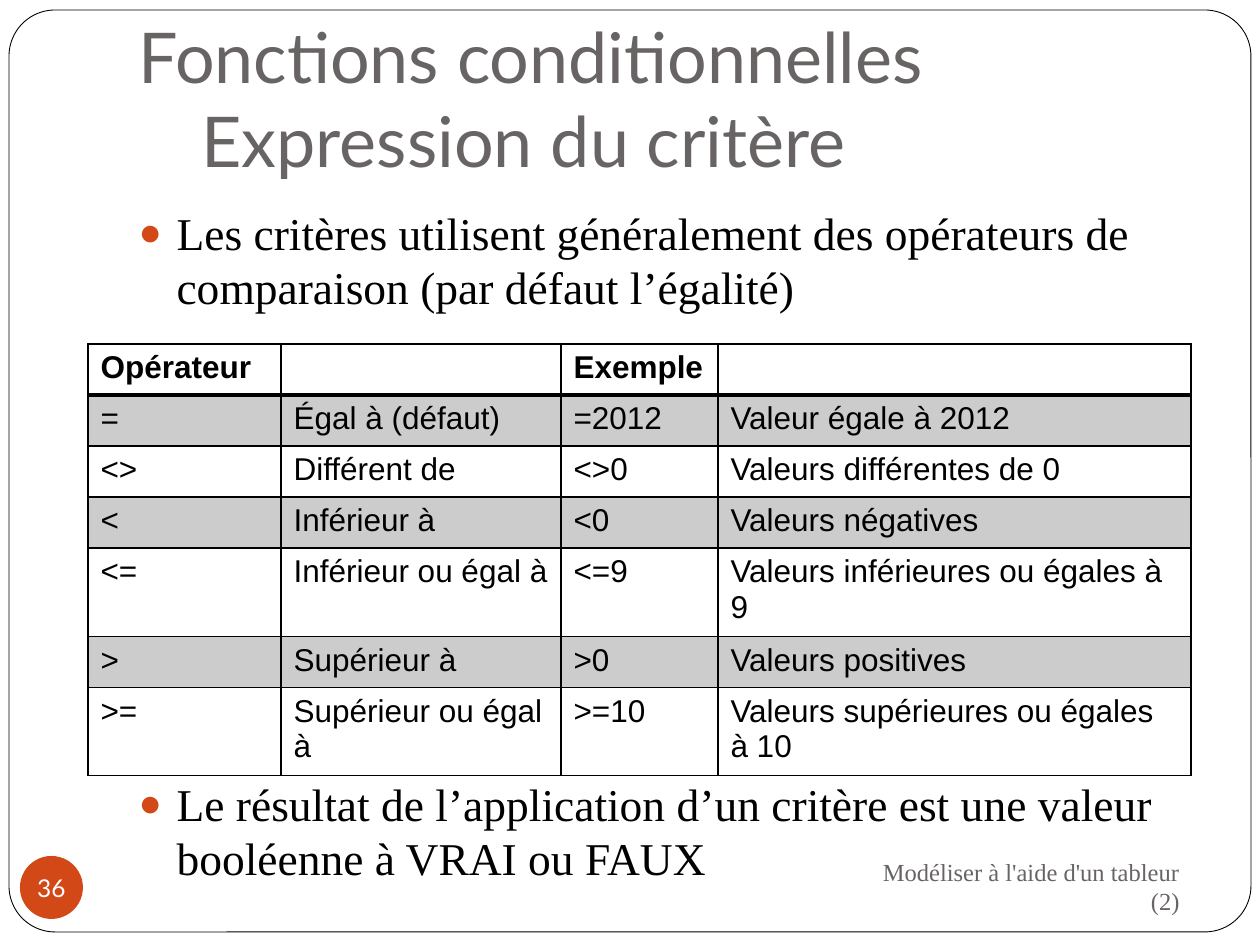
from pptx import Presentation
from pptx import util as u
from pptx.dml import color
from pptx.enum import shapes, text
from pptx.oxml import parse_xml
from pptx.oxml import ns

BLACK = color.RGBColor(0x00, 0x00, 0x00)
WHITE = color.RGBColor(0xFF, 0xFF, 0xFF)
GREY = color.RGBColor(0x69, 0x64, 0x64)
ORANGE = color.RGBColor(0xD3, 0x48, 0x17)
EMU_PER_PX = 914400 / 126


def px(*lengths):
    return [u.Emu(round(length * EMU_PER_PX)) for length in lengths]


def style(paragraph, font_color, paragraph_format, font_format):
    for name, value in paragraph_format.items():
        setattr(paragraph, name, value)
    for run in paragraph.runs:
        for name, value in font_format.items():
            setattr(run.font, name, value)
        run.font.color.rgb = font_color


presentation = Presentation()
presentation.slide_width, presentation.slide_height = px(1260, 945)
slide = presentation.slides.add_slide(presentation.slide_layouts[1])

frame = slide.shapes.add_shape(shapes.MSO_SHAPE.ROUNDED_RECTANGLE, *px(9, 10, 1242, 922))
frame.adjustments[0] = 0.05
frame.shadow.inherit = False
frame.fill.solid()
frame.fill.fore_color.rgb = WHITE
frame.line.color.rgb = BLACK
frame.line.width = u.Pt(0.5)
slide.shapes._spTree.insert(2, frame._element)

title = slide.shapes.title
title.left, title.top, title.width, title.height = px(126, 38, 1071, 157)
title_format = {
    "vertical_anchor": text.MSO_ANCHOR.BOTTOM,
    "auto_size": text.MSO_AUTO_SIZE.NONE,
    "margin_bottom": px(13)[0],
    "text": "Fonctions conditionnelles\v\tExpression du critère",
}
for name, value in title_format.items():
    setattr(title.text_frame, name, value)
style(title.text_frame.paragraphs[0], GREY, {"alignment": text.PP_ALIGN.LEFT},
      {"size": u.Pt(40), "name": "Lato"})

body = slide.placeholders[1]
body.left, body.top, body.width, body.height = px(126, 199, 1071, 630)
body.text_frame.auto_size = text.MSO_AUTO_SIZE.NONE
body.text_frame.text = (
    "Les critères utilisent généralement des opérateurs de comparaison (par défaut l’égalité)\n"
    "Le résultat de l’application d’un critère est une valeur booléenne à VRAI ou FAUX"
)
indent = px(38)[0]
for paragraph, space in zip(body.text_frame.paragraphs, (3, 264)):
    style(paragraph, BLACK, {"space_before": u.Pt(space), "line_spacing": u.Pt(31)},
          {"size": u.Pt(26), "name": "Times New Roman"})
    properties = paragraph._p.get_or_add_pPr()
    properties.set("marL", str(indent))
    properties.set("indent", str(-indent))
    for bullet in (f'buClr {ns.nsdecls("a")}><a:srgbClr val="{ORANGE}"/></a:buClr',
                   f'buSzPct {ns.nsdecls("a")} val="85000"/',
                   f'buChar {ns.nsdecls("a")} char="●"/'):
        properties.append(parse_xml(f"<a:{bullet}>"))

footer = slide.shapes.add_textbox(*px(850, 853, 342, 66))
footer.text_frame.word_wrap = True
footer.text_frame.vertical_anchor = text.MSO_ANCHOR.MIDDLE
footer.text_frame.text = "Modéliser à l'aide d'un tableur (2)"
style(footer.text_frame.paragraphs[0], GREY, {"alignment": text.PP_ALIGN.RIGHT},
      {"size": u.Pt(14), "name": "Times New Roman"})

badge = slide.shapes.add_shape(shapes.MSO_SHAPE.OVAL, *px(20, 856, 63, 63))
badge.shadow.inherit = False
badge.fill.solid()
badge.fill.fore_color.rgb = ORANGE
badge.line.fill.background()
badge_format = {
    "margin_left": 0, "margin_right": 0, "margin_top": 0, "margin_bottom": 0,
    "word_wrap": False, "vertical_anchor": text.MSO_ANCHOR.MIDDLE, "text": "36",
}
for name, value in badge_format.items():
    setattr(badge.text_frame, name, value)
style(badge.text_frame.paragraphs[0], WHITE, {"alignment": text.PP_ALIGN.CENTER},
      {"size": u.Pt(14), "name": "Lato"})

rows = [
    ("Opérateur", "", "Exemple", ""),
    ("=", "Égal à (défaut)", "=2012", "Valeur égale à 2012"),
    ("<>", "Différent de", "<>0", "Valeurs différentes de 0"),
    ("<", "Inférieur à", "<0", "Valeurs négatives"),
    ("<=", "Inférieur ou égal à", "<=9", "Valeurs inférieures ou égales à 9"),
    (">", "Supérieur à", ">0", "Valeurs positives"),
    (">=", "Supérieur ou égal à", ">=10", "Valeurs supérieures ou égales à 10"),
]
column_widths = px(193, 280, 157, 473)
row_height = px(51)[0]
table = slide.shapes.add_table(len(rows), len(column_widths), *px(88, 344, 1103, 357)).table
table.first_row = table.horz_banding = False
for column, width in zip(table.columns, column_widths):
    column.width = width
for row_index, row in enumerate(rows):
    table.rows[row_index].height = row_height
    for column_index, label in enumerate(row):
        cell = table.cell(row_index, column_index)
        cell.text = label
        style(cell.text_frame.paragraphs[0], BLACK, {},
              {"size": u.Pt(18), "name": "Arial", "bold": row_index == 0})
        if row_index % 2:
            cell.fill.solid()
            cell.fill.fore_color.rgb = BLACK
            shade = cell._tc.tcPr.find(".//" + ns.qn("a:srgbClr"))
            shade.append(parse_xml(f'<a:alpha {ns.nsdecls("a")} val="20000"/>'))
        else:
            cell.fill.background()
        for position, side in enumerate("LRTB"):
            heavy = (row_index, side) in ((0, "B"), (1, "T"))
            cell._tc.tcPr.insert(position, parse_xml(
                f'<a:ln{side} {ns.nsdecls("a")} w="{u.Pt(2 if heavy else 1)}">'
                f'<a:solidFill><a:srgbClr val="{BLACK}"/></a:solidFill></a:ln{side}>'))

presentation.save("out.pptx")
